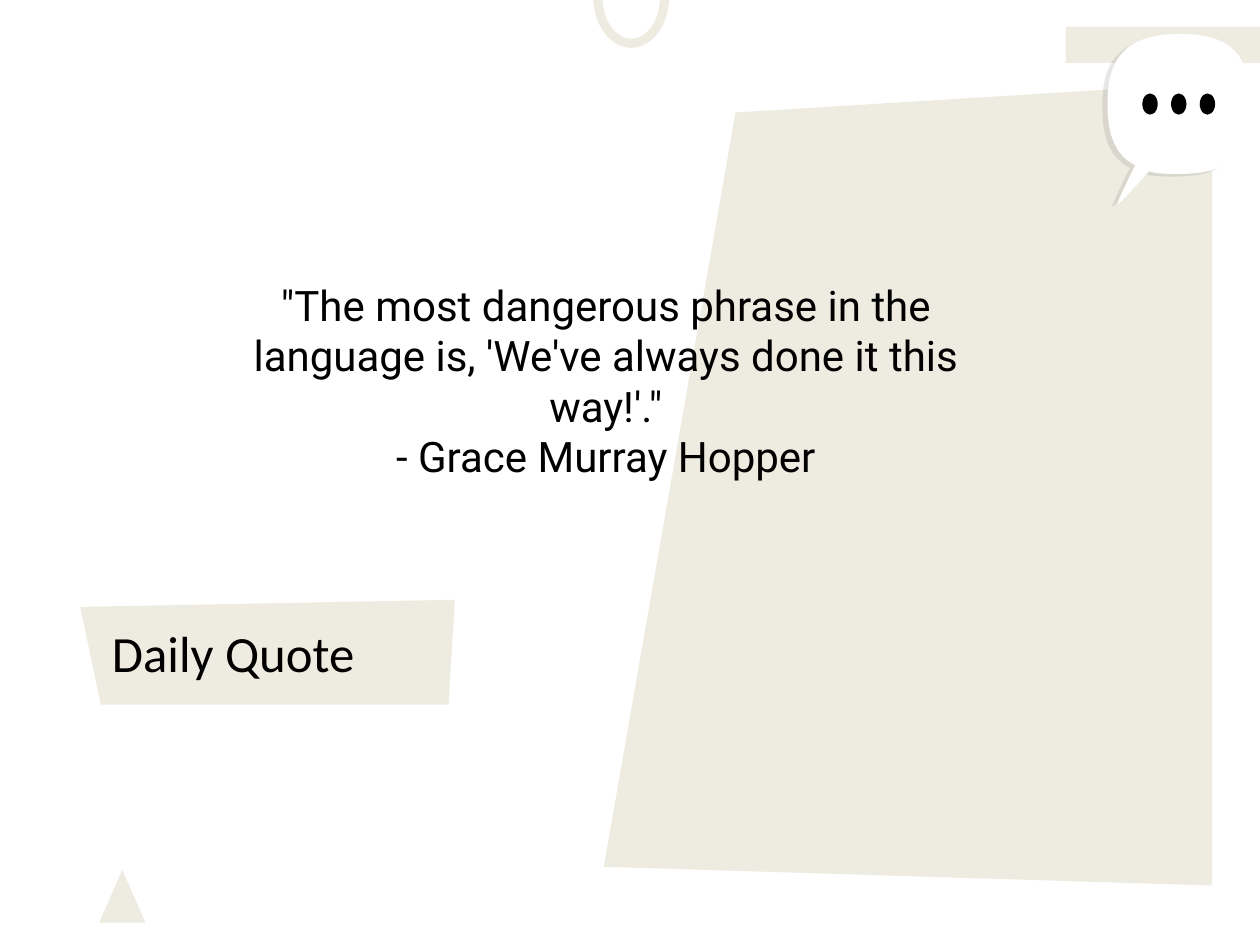
from lxml import etree
from pptx import Presentation
from pptx.dml.color import RGBColor
from pptx.enum import shapes, text
from pptx.oxml.ns import qn
from pptx.util import Pt

BEIGE, WHITE, BLACK, GREY = "EEECE1", "FFFFFF", "000000", "4D4D4D"

BUBBLE_START = (674.6, 19.4)
BUBBLE_CURVES = [
    ((639.4, 19.4), (632.9, 37.4), (632.9, 59.4)),
    ((632.9, 74.2), (635.8, 87.8), (648.7, 94.5)),
    ((645.1, 101.5), (638.6, 115.2), (638.6, 116.6)),
    ((640.1, 116.6), (648.7, 106.6), (656.6, 97.9)),
    ((661.7, 99.4), (667.4, 99.4), (674.6, 99.4)),
    ((709.2, 99.4), (714.2, 81.4), (714.2, 59.4)),
    ((714.2, 37.4), (709.2, 19.4), BUBBLE_START),
]


def color(hex_code):
    return RGBColor.from_string(hex_code)


def paint(sp, fill, alpha=None):
    """Give a flat fill without line or shadow; alpha is a percentage."""
    sp.shadow.inherit = False
    sp.fill.solid()
    sp.fill.fore_color.rgb = color(fill)
    sp.line.fill.background()
    if alpha is not None:
        clr = sp.fill._xPr.find(qn("a:solidFill"))[0]
        etree.SubElement(clr, qn("a:alpha"), val=str(alpha * 1000))


def add_preset(parent, kind, box, fill, rotation=0, adjustments=()):
    sp = parent.add_shape(kind, *map(Pt, box))
    sp.rotation = rotation
    for i, value in enumerate(adjustments):
        sp.adjustments[i] = value
    paint(sp, fill)


def add_outline(parent, points, fill, alpha=None):
    points = [(Pt(x), Pt(y)) for x, y in points]
    builder = parent.build_freeform(*points[0])
    builder.add_line_segments(points[1:], close=True)
    sp = builder.convert_to_shape()
    paint(sp, fill, alpha)
    return sp


def add_curved_outline(parent, start, curves, fill, dx=0, dy=0, alpha=None):
    """Outline of cubic curves, each given as two controls and an end."""
    moved = [[(x + dx, y + dy) for x, y in curve] for curve in curves]
    corners = [(start[0] + dx, start[1] + dy)] + [c[-1] for c in moved]
    sp = add_outline(parent, corners, fill, alpha)
    segments = list(sp._element.iter(qn("a:lnTo")))
    for segment, curve in zip(segments, moved):
        bezier = etree.Element(qn("a:cubicBezTo"))
        for x, y in curve:
            etree.SubElement(bezier, qn("a:pt"), x=str(Pt(x) - sp.left),
                             y=str(Pt(y) - sp.top))
        segment.getparent().replace(segment, bezier)


def add_speech_bubble(parent):
    group = parent.add_group_shape().shapes
    add_curved_outline(group, BUBBLE_START, BUBBLE_CURVES, GREY,
                       dx=-3, dy=1.5, alpha=13)
    add_curved_outline(group, BUBBLE_START, BUBBLE_CURVES, WHITE)
    for i in range(3):
        add_preset(group, shapes.MSO_SHAPE.OVAL,
                   (652.8, 53.4, 8.8, 12.1) if i == 0 else
                   (652.8 + 16.4 * i, 53.4, 8.8, 12.1), BLACK)


def add_text(parent, box, lines, font, size, align, anchor, auto_size):
    tf = parent.add_textbox(*map(Pt, box)).text_frame
    tf.word_wrap = True
    tf.auto_size = auto_size
    tf.vertical_anchor = anchor
    tf.margin_left = tf.margin_right = tf.margin_top = tf.margin_bottom = Pt(7.2)
    tf.text = "\n".join(lines)
    for p in tf.paragraphs:
        p.alignment = align
        p.font.name = font
        p.font.size = Pt(size)
        p.font.color.rgb = color(BLACK)


def main():
    prs = Presentation()
    prs.slide_width, prs.slide_height = Pt(720), Pt(540)
    slide = prs.slides.add_slide(prs.slide_layouts[6])
    slide.background.fill.solid()
    slide.background.fill.fore_color.rgb = color(WHITE)
    sps = slide.shapes
    kinds = shapes.MSO_SHAPE

    add_preset(sps, kinds.RECTANGLE, (609, 15.2, 111, 20.8), BEIGE)
    add_preset(sps, kinds.ISOSCELES_TRIANGLE, (56.7, 497, 26.4, 30.2), BEIGE)
    add_preset(sps, kinds.BLOCK_ARC, (339, -31, 43.4, 58.3), BEIGE,
               rotation=180, adjustments=(108, 2.64, 0.12))

    add_outline(sps, [(259.9, 342.7), (256.3, 402.6), (57.6, 402.6),
                      (45.8, 346.8)], BEIGE)
    add_text(sps, (56.9, 352.8, 288, 39.6), ["Daily Quote"], "Calibri", 29,
             text.PP_ALIGN.LEFT, text.MSO_ANCHOR.MIDDLE,
             text.MSO_AUTO_SIZE.NONE)

    add_outline(sps, [(345, 495.3), (420.3, 64.3), (692.6, 47.5),
                      (692.6, 506)], BEIGE)
    add_speech_bubble(sps)
    add_text(sps, (123.7, 152.4, 445, 131),
             ["\"The most dangerous phrase in the language is, "
              "'We've always done it this way!'.\"",
              "- Grace Murray Hopper"],
             "Roboto", 24, text.PP_ALIGN.CENTER, text.MSO_ANCHOR.TOP,
             text.MSO_AUTO_SIZE.SHAPE_TO_FIT_TEXT)
    prs.save("out.pptx")


if __name__ == "__main__":
    main()
